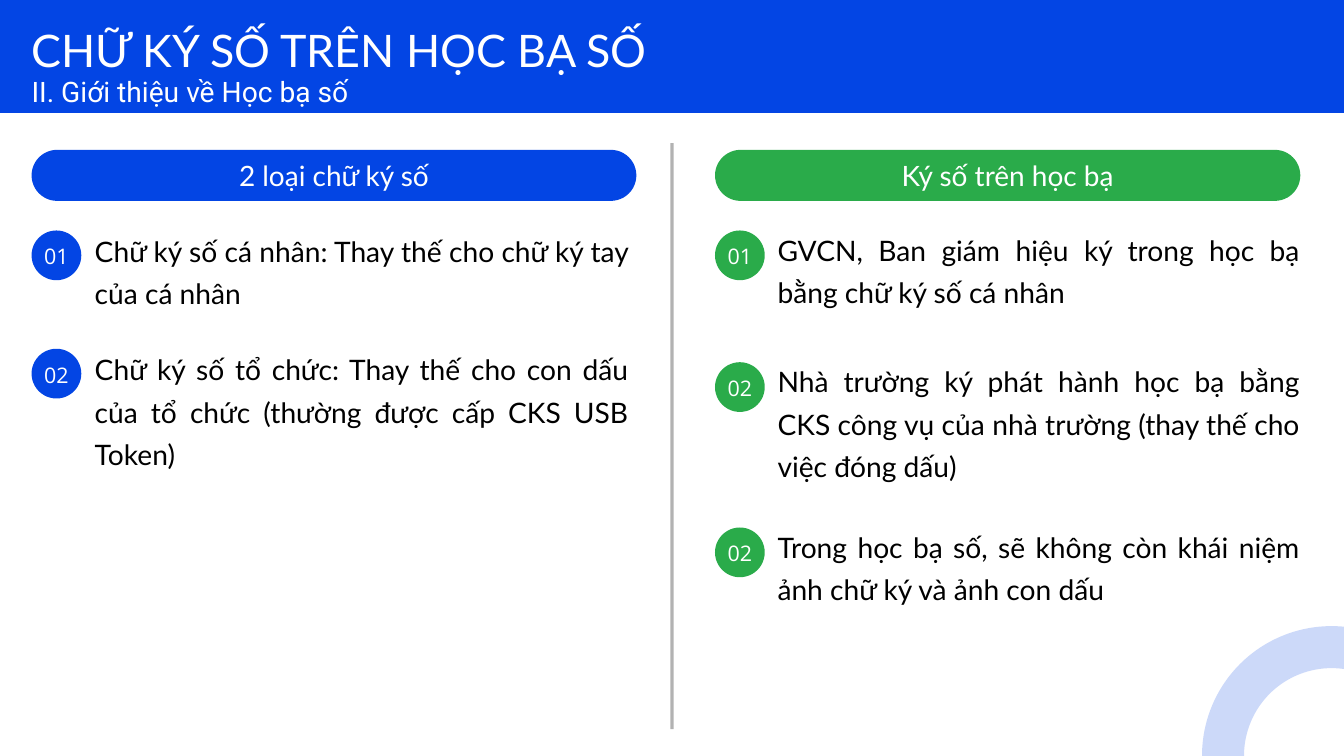
from lxml.etree import SubElement
from pptx import Presentation
from pptx.dml.color import RGBColor
from pptx.enum.shapes import MSO_CONNECTOR, MSO_SHAPE as Shape
from pptx.enum.text import MSO_ANCHOR as Anchor, MSO_AUTO_SIZE, PP_ALIGN as Align
from pptx.oxml.ns import qn
from pptx.util import Inches, Pt

TITLE = "CHỮ KÝ SỐ TRÊN HỌC BẠ SỐ"
SUBTITLE = "II. Giới thiệu về Học bạ số"

# Each item: badge number, badge top, text top, text height, text
COLUMNS = [
    {
        "heading": "2 loại chữ ký số", "color": "blue",
        "left": 0.47, "width": 9, "text_left": 1.41, "text_width": 7.95,
        "items": [
            ("01", 3.43, 3.36, 1.22, "Chữ ký số cá nhân: Thay thế cho chữ ký tay của cá nhân"),
            ("02", 5.19, 5.12, 1.84, "Chữ ký số tổ chức: Thay thế cho con dấu của tổ chức "
                                     "(thường được cấp CKS USB Token)"),
        ],
    },
    {
        "heading": "Ký số trên học bạ", "color": "green",
        "left": 10.64, "width": 8.71, "text_left": 11.57, "text_width": 7.78,
        "items": [
            ("01", 3.43, 3.34, 1.22, "GVCN, Ban giám hiệu ký trong học bạ bằng chữ ký số cá nhân"),
            ("02", 5.39, 5.3, 1.84, "Nhà trường ký phát hành học bạ bằng CKS công vụ của "
                                    "nhà trường (thay thế cho việc đóng dấu)"),
            ("02", 7.85, 7.76, 1.84, "Trong học bạ số, sẽ không còn khái niệm ảnh chữ ký "
                                     "và ảnh con dấu"),
        ],
    },
]

COLORS = {"blue": "0345E4", "green": "2AAB4A", "black": "000000", "white": "FFFFFF"}
PILL_TOP, PILL_HEIGHT = 2.23, 0.76
BADGE_SIZE = 0.74


def color(name):
    return RGBColor.from_string(COLORS[name])


def write(shape, text, font, size, spacing, ink, align=Align.JUSTIFY, anchor=Anchor.TOP):
    frame = shape.text_frame
    frame.text = text
    frame.word_wrap = True
    frame.auto_size = MSO_AUTO_SIZE.NONE
    frame.vertical_anchor = anchor
    frame.margin_left = frame.margin_right = frame.margin_top = frame.margin_bottom = 0
    para = frame.paragraphs[0]
    para.alignment = align
    para.line_spacing = Pt(spacing)
    para.font.name = font
    para.font.size = Pt(size)
    para.font.color.rgb = color(ink)


def add_text(slide, box, *style):
    write(slide.shapes.add_textbox(*map(Inches, box)), *style)


def add_filled(slide, kind, box, fill):
    shape = slide.shapes.add_shape(kind, *map(Inches, box))
    shape.shadow.inherit = False
    shape.fill.solid()
    shape.fill.fore_color.rgb = color(fill)
    shape.line.fill.background()
    return shape


def set_line(shape, name, width, opacity):
    """Give a shape a translucent line; opacity is in percent."""
    shape.line.color.rgb = color(name)
    shape.line.width = Pt(width)
    line_color = next(shape.element.find(".//" + qn("a:ln")).iter(qn("a:srgbClr")))
    SubElement(line_color, qn("a:alpha"), val=str(opacity * 1000))


def add_header(slide):
    band = add_filled(slide, Shape.RECTANGLE, (0, 0, 20, 1.68), "blue")
    title = slide.shapes.title
    title.left, title.top, title.width, title.height = map(Inches, (0.47, 0.11, 9.7, 0.96))
    write(title, TITLE, "Lato", 48, 74.4, "white")
    band.element.addnext(title.element)
    add_text(slide, (0.47, 0.98, 7.34, 0.59), SUBTITLE, "Roboto", 30.2, 45.4, "white")


def add_decoration(slide):
    ring = add_filled(slide, Shape.OVAL, (18.2, 9.63, 3.23, 3.23), "blue")
    ring.fill.background()
    set_line(ring, "blue", 45, 20)
    divider = slide.shapes.add_connector(
        MSO_CONNECTOR.STRAIGHT, *map(Inches, (10, 2.13, 10, 10.85)))
    set_line(divider, "black", 3.75, 30)
    SubElement(divider.element.spPr, qn("a:effectLst"))


def add_column(slide, column):
    left, fill = column["left"], column["color"]
    pill = add_filled(slide, Shape.ROUNDED_RECTANGLE,
                      (left, PILL_TOP, column["width"], PILL_HEIGHT), fill)
    pill.adjustments[0] = 0.5
    write(pill, column["heading"], "Lato", 30, 42, "white", Align.CENTER, Anchor.MIDDLE)
    pill.text_frame.margin_bottom = Inches(0.08)
    for number, badge_top, text_top, height, text in column["items"]:
        badge = add_filled(slide, Shape.OVAL, (left, badge_top, BADGE_SIZE, BADGE_SIZE), fill)
        write(badge, number, "Open Sans", 23, 32.2, "white", Align.CENTER, Anchor.MIDDLE)
        badge.text_frame.margin_bottom = Inches(0.04)
        add_text(slide, (column["text_left"], text_top, column["text_width"], height),
                 text, "Lato", 30.2, 45.4, "black")


def main():
    deck = Presentation()
    deck.slide_width, deck.slide_height = Inches(20), Inches(11.25)
    slide = deck.slides.add_slide(deck.slide_layouts.get_by_name("Title Only"))
    add_header(slide)
    add_decoration(slide)
    for column in COLUMNS:
        add_column(slide, column)
    deck.save("out.pptx")


if __name__ == "__main__":
    main()
